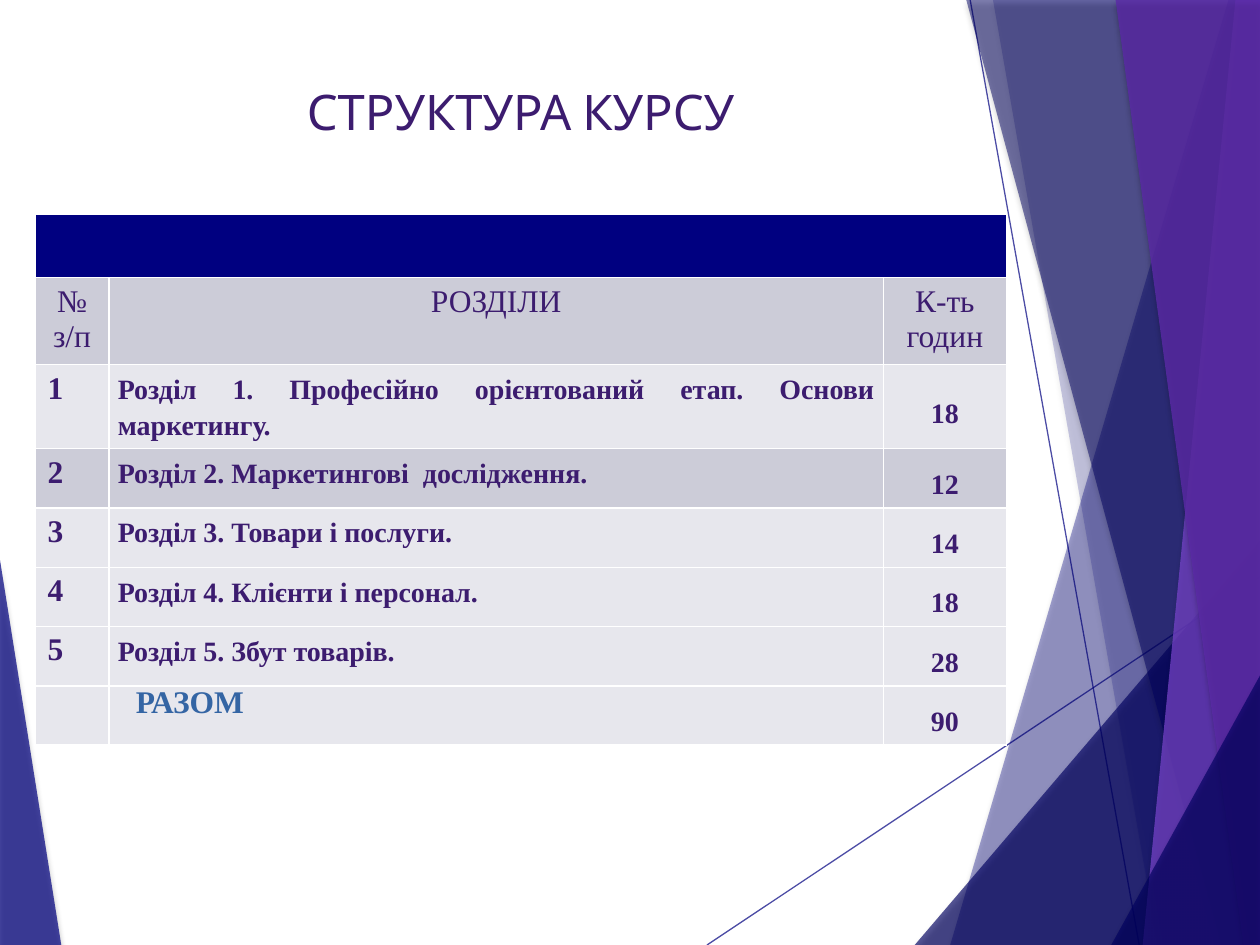
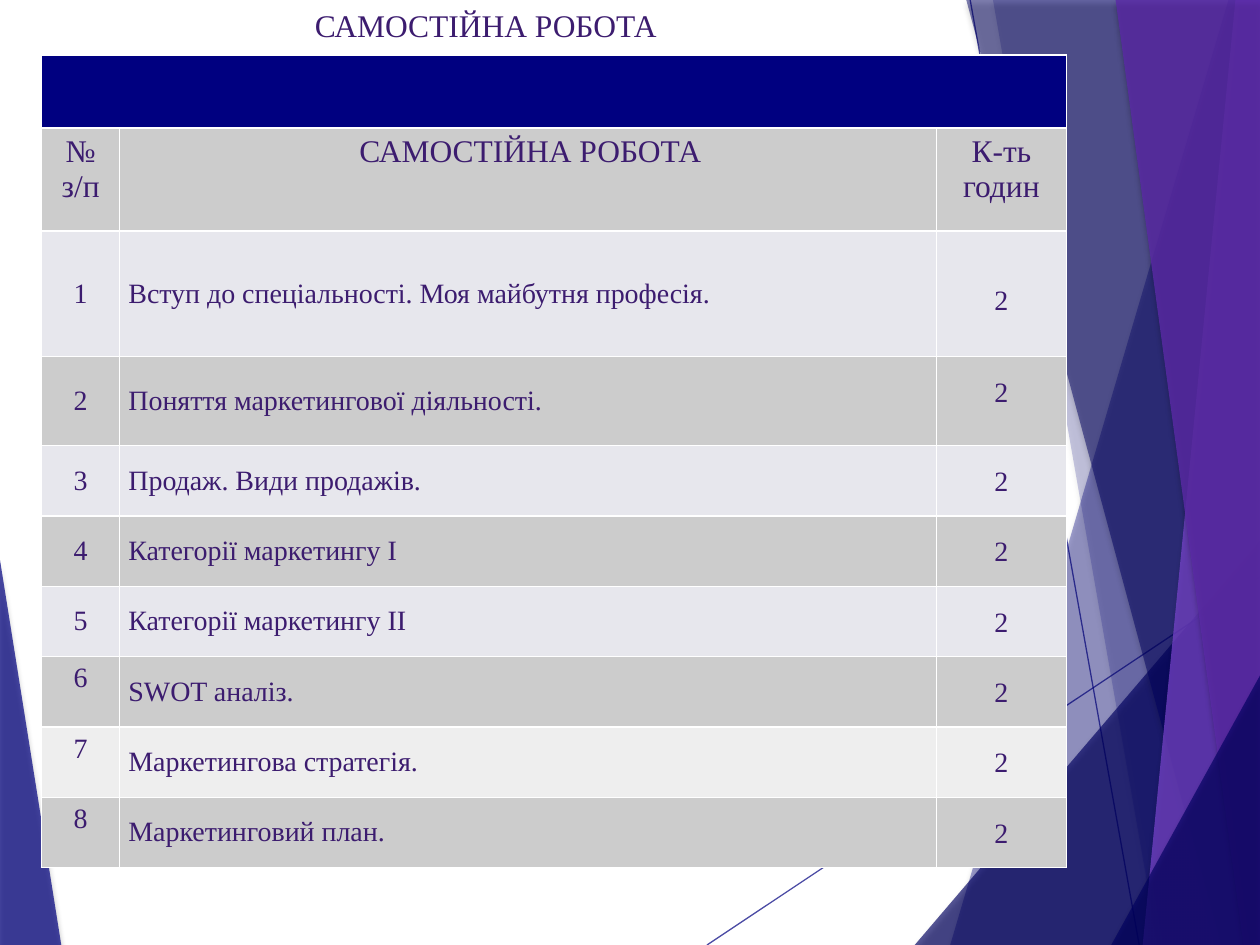
from dataclasses import dataclass

from lxml import etree
from pptx import Presentation
from pptx.dml.color import RGBColor
from pptx.enum.shapes import MSO_CONNECTOR
from pptx.enum.text import MSO_ANCHOR, PP_ALIGN
from pptx.oxml.ns import qn
from pptx.util import Pt

LEFT, CENTER, JUSTIFY = PP_ALIGN.LEFT, PP_ALIGN.CENTER, PP_ALIGN.JUSTIFY
TOP, MIDDLE = MSO_ANCHOR.TOP, MSO_ANCHOR.MIDDLE
STRAIGHT = MSO_CONNECTOR.STRAIGHT
WIDTH, HEIGHT = 720, 540


@dataclass(frozen=True)
class Theme:
    # Colours
    text: str = "3C1C6F"
    total: str = "3465A4"
    navy: str = "000080"
    dark_navy: str = "000060"
    violet: str = "7B46D0"
    purple: str = "5A2AA6"
    white: str = "FFFFFF"
    black: str = "000000"
    lilac: str = "CCCCD8"
    gray: str = "CCCCCC"
    pale: str = "E7E7ED"
    pale_gray: str = "EEEEEE"
    # Type
    title_font: str = "Cabin"
    body_font: str = "Times New Roman"
    title_size: int = 28
    heading_size: int = 18
    body_size: int = 16
    # Lines
    border: float = 0.96
    ray: float = 0.75


THEME = Theme()

# Background facets: colour, opacity in percent, outline points
WEDGE = (THEME.navy, 70, [(0, 320), (35, HEIGHT), (0, HEIGHT)])
FACETS = [
    (THEME.navy, 36, [(702, 0), (543, HEIGHT), (WIDTH, HEIGHT), (WIDTH, 0)]),
    (THEME.navy, 20, [(567.4, 0), (661.7, HEIGHT), (WIDTH, HEIGHT), (WIDTH, 0)]),
    (THEME.dark_navy, 66, [(522.7, HEIGHT), (WIDTH, 309), (WIDTH, HEIGHT)]),
    (THEME.dark_navy, 50, [(552.2, 0), (697.7, HEIGHT), (WIDTH, HEIGHT), (WIDTH, 0)]),
    (THEME.violet, 70, [(706, 0), (653, HEIGHT), (WIDTH, HEIGHT), (WIDTH, 0)]),
    (THEME.purple, 82, [(637.5, 0), (710.6, HEIGHT), (WIDTH, HEIGHT), (WIDTH, 0)]),
    (THEME.dark_navy, 66, [(635, HEIGHT), (WIDTH, 386), (WIDTH, HEIGHT)]),
]
RAYS = [((404, HEIGHT), (WIDTH, 329.5)), ((554.4, 0), (651, HEIGHT))]

# Cell formats
HEADING = dict(align=CENTER)
BODY = dict(size=THEME.body_size, margins=(5, 3))
HOURS = dict(BODY, align=CENTER, line_spacing=1.5)
FIRST_HOURS = dict(HOURS, anchor=MIDDLE, space_after=10)
SECTION = dict(BODY, align=JUSTIFY, line_spacing=1.15, space_after=10, bold=True)
TOPIC = dict(BODY, anchor=MIDDLE)


def write_text(frame, text, size=THEME.heading_size, font=THEME.body_font,
               color=THEME.text, bold=False, align=LEFT, line_spacing=None,
               space_after=None):
    paragraph = frame.paragraphs[0]
    paragraph.alignment = align
    if line_spacing:
        paragraph.line_spacing = line_spacing
    if space_after:
        paragraph.space_after = Pt(space_after)
    run = paragraph.add_run()
    run.text = text
    run.font.size = Pt(size)
    run.font.name = font
    run.font.bold = bold
    run.font.color.rgb = RGBColor.from_string(color)


def add_color(parent, color, opacity=100):
    element = etree.SubElement(parent, qn("a:srgbClr"), val=color)
    if opacity < 100:
        set_opacity(element, opacity)


def set_opacity(color_element, opacity):
    etree.SubElement(color_element, qn("a:alpha"), val=str(opacity * 1000))


class Deck:
    def __init__(self, theme):
        self.theme = theme
        self.presentation = Presentation()
        self.presentation.slide_width = Pt(WIDTH)
        self.presentation.slide_height = Pt(HEIGHT)
        self.slide = None

    def add_slide(self):
        self.slide = self.presentation.slides.add_slide(
            self.presentation.slide_layouts[6])
        self.add_facet(*WEDGE)
        for start, end in RAYS:
            self.add_ray(start, end)
        for facet in FACETS:
            self.add_facet(*facet)

    def add_facet(self, color, opacity, points):
        corners = [(Pt(x), Pt(y)) for x, y in points]
        builder = self.slide.shapes.build_freeform(*corners[0])
        builder.add_line_segments(corners[1:])
        shape = builder.convert_to_shape()
        shape.fill.solid()
        shape.fill.fore_color.rgb = RGBColor.from_string(color)
        shape.line.fill.background()
        shape.shadow.inherit = False
        properties = shape.element.spPr
        set_opacity(properties.find(f"{qn('a:solidFill')}/{qn('a:srgbClr')}"), opacity)
        shadow = etree.SubElement(
            properties.find(qn("a:effectLst")), qn("a:outerShdw"),
            blurRad=str(Pt(3)), dist=str(Pt(2)), dir="5400000", rotWithShape="0")
        add_color(shadow, self.theme.black, 35)

    def add_ray(self, start, end):
        connector = self.slide.shapes.add_connector(
            STRAIGHT, *(Pt(value) for value in start + end))
        connector.line.width = Pt(self.theme.ray)
        connector.line.color.rgb = RGBColor.from_string(self.theme.navy)
        properties = connector.element.spPr
        set_opacity(next(properties.iter(qn("a:srgbClr"))), 70)
        etree.SubElement(properties, qn("a:effectLst"))

    def add_text(self, text, left, top, width, height, **text_format):
        box = self.slide.shapes.add_textbox(Pt(left), Pt(top), Pt(width), Pt(height))
        box.text_frame.word_wrap = True
        write_text(box.text_frame, text, **text_format)

    def add_table(self, left, top, widths, rows):
        """Each row is (height, fill, cells); a cell is (text, format) or None."""
        height = sum(row[0] for row in rows)
        table = self.slide.shapes.add_table(
            len(rows), len(widths), Pt(left), Pt(top),
            Pt(sum(widths)), Pt(height)).table
        table.first_row = table.horz_banding = False
        for column, width in zip(table.columns, widths):
            column.width = Pt(width)
        for table_row, (row_height, fill, contents) in zip(table.rows, rows):
            table_row.height = Pt(row_height)
            for cell, content in zip(table_row.cells, contents):
                self.style_cell(cell, fill)
                if content:
                    self.fill_cell(cell, *content)
        table.cell(0, 0).merge(table.cell(0, len(widths) - 1))

    def style_cell(self, cell, fill):
        cell.fill.solid()
        cell.fill.fore_color.rgb = RGBColor.from_string(fill)
        properties = cell._tc.get_or_add_tcPr()
        for position, side in enumerate("LRTB"):
            line = etree.Element(qn(f"a:ln{side}"), w=str(Pt(self.theme.border)))
            add_color(etree.SubElement(line, qn("a:solidFill")), self.theme.white)
            properties.insert(position, line)

    def fill_cell(self, cell, text, cell_format):
        text_format = dict(cell_format)
        cell.vertical_anchor = text_format.pop("anchor", TOP)
        side, edge = text_format.pop("margins", (7.2, 3.6))
        cell.margin_left = cell.margin_right = Pt(side)
        cell.margin_top = cell.margin_bottom = Pt(edge)
        write_text(cell.text_frame, text, **text_format)


def band_and_heading(band_height, heading_height, heading_fill, heading):
    return [
        (band_height, THEME.navy, [None] * 3),
        (heading_height, heading_fill,
         [("№ з/п", HEADING), heading, ("К-ть годин", HEADING)]),
    ]


def build_course_structure(deck):
    deck.add_slide()

    # Sections with their hours
    sections = [
        ("Розділ 1. Професійно орієнтований етап. Основи маркетингу.", "18"),
        ("Розділ 2. Маркетингові  дослідження.", "12"),
        ("Розділ 3. Товари і послуги.", "14"),
        ("Розділ 4. Клієнти і персонал.", "18"),
        ("Розділ 5. Збут товарів.", "28"),
    ]
    rows = band_and_heading(36, 49.7, THEME.lilac, ("РОЗДІЛИ", HEADING))
    for number, (section, hours) in enumerate(sections, 1):
        hours_format = FIRST_HOURS if number == 1 else HOURS
        rows.append((48 if number == 1 else 33.9,
                     THEME.lilac if number == 2 else THEME.pale,
                     [(str(number), dict(bold=True)), (section, SECTION),
                      (hours, dict(hours_format, bold=True))]))
    rows.append((33.9, THEME.pale, [None, None, ("90", dict(HOURS, bold=True))]))
    deck.add_table(20, 122.7, [42.4, 442.4, 70.3], rows)

    # Title and total
    deck.add_text("СТРУКТУРА КУРСУ", 117.4, 43.2, 360, 40.3, align=CENTER,
                  size=THEME.title_size, font=THEME.title_font)
    deck.add_text("РАЗОМ", 70.6, 386, 82, 26.6, color=THEME.total, bold=True)


def build_independent_work(deck):
    deck.add_slide()
    heading = "САМОСТІЙНА РОБОТА"

    # Topics, two hours each
    topics = [
        "Вступ до спеціальності. Моя майбутня професія.",
        "Поняття маркетингової діяльності.",
        "Продаж. Види продажів.",
        "Категорії маркетингу І",
        "Категорії маркетингу ІІ",
        "SWOT аналіз.",
        "Маркетингова стратегія.",
        "Маркетинговий план.",
    ]
    tall_rows = {1: 71.6, 2: 51}
    rows = band_and_heading(41.7, 58.9, THEME.gray, None)
    for number, topic in enumerate(topics, 1):
        fill = THEME.pale if number % 2 else THEME.gray
        number_format = dict(size=THEME.body_size, align=CENTER,
                             anchor=MIDDLE if number <= 5 else TOP)
        rows.append((tall_rows.get(number, 40.2),
                     THEME.pale_gray if number == 7 else fill,
                     [(str(number), number_format), (topic, TOPIC),
                      ("2", FIRST_HOURS if number == 1 else HOURS)]))
    deck.add_table(23.8, 31.5, [44.6, 466.7, 74.3], rows)

    # Column heading and slide title
    deck.add_text(heading, 122.4, 71.3, 361.4, 28.8, align=CENTER)
    deck.add_text(heading, 45.4, 0, 464.4, 28.8, align=CENTER)


def main():
    deck = Deck(THEME)
    build_course_structure(deck)
    build_independent_work(deck)
    deck.presentation.save("out.pptx")


if __name__ == "__main__":
    main()
